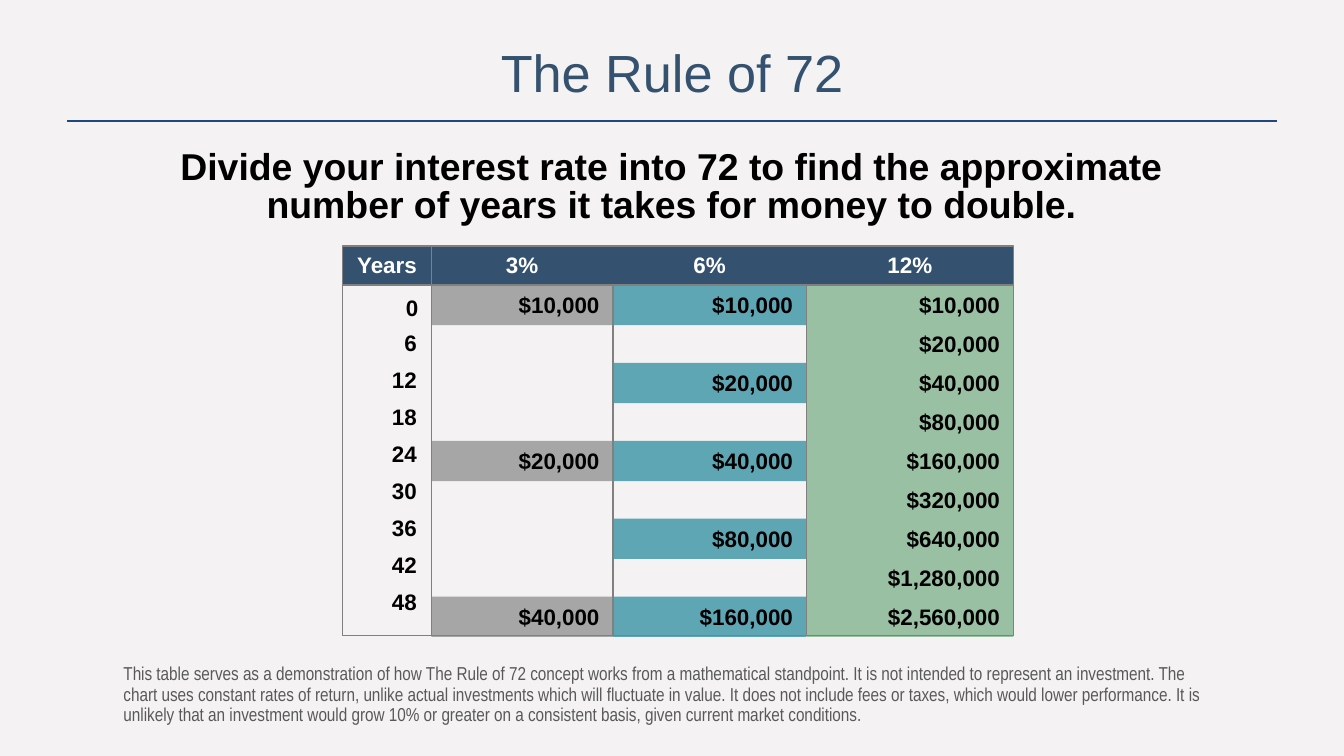
from dataclasses import dataclass

from lxml import etree
from pptx import Presentation
from pptx.dml.color import RGBColor
from pptx.enum import shapes, text
from pptx.oxml import ns
from pptx.util import Inches, Pt


@dataclass(frozen=True)
class Theme:
    font: str = "Arial"
    narrow_font: str = "Arial Narrow"
    background: str = "F4F2F2"
    rule: str = "1F497D"
    navy: str = "34526F"
    grid: str = "808080"
    ink: str = "000000"
    white: str = "FFFFFF"
    note: str = "595959"
    title_size: int = 28
    lead_size: int = 20
    table_size: int = 12
    note_size: int = 10
    line_width: float = 0.75


THEME = Theme()
LEFT, CENTER, RIGHT = text.PP_ALIGN.LEFT, text.PP_ALIGN.CENTER, text.PP_ALIGN.RIGHT

YEARS = range(0, 49, 6)
START_AMOUNT = 10000
# Interest rate, column width, fill colour
RATES = [(3, 1.35, "A6A6A6"), (6, 1.44, "5FA6B5"), (12, 1.54, "9AC0A4")]
YEARS_WIDTH = 0.66
ROW_PITCH = 0.29
CELL_HEIGHT = 0.3


def rgb(value):
    return RGBColor.from_string(value)


def add_text(page, box, *lines, size=THEME.table_size, color=THEME.ink, font=THEME.font,
             bold=True, align=CENTER, anchor=text.MSO_ANCHOR.TOP, fill=None,
             spacing=None, after=0):
    """Write one paragraph per line, in a filled rectangle if fill is given."""
    if fill:
        shape = add_rect(page, box, fill=fill)
    else:
        shape = page.shapes.add_textbox(*[Inches(length) for length in box])
    frame = shape.text_frame
    frame.word_wrap = True
    frame.vertical_anchor = anchor
    for index, line in enumerate(lines):
        para = frame.paragraphs[0] if index == 0 else frame.add_paragraph()
        para.alignment = align
        para.space_after = Pt(after)
        if spacing:
            para.line_spacing = spacing
        span = para.add_run()
        span.text = line
        span.font.name = font
        span.font.size = Pt(size)
        span.font.bold = bold
        span.font.color.rgb = rgb(color)


def add_rect(page, box, fill=None, line=None):
    rect = page.shapes.add_shape(
        shapes.MSO_SHAPE.RECTANGLE, *[Inches(length) for length in box])
    rect.shadow.inherit = False
    if fill:
        rect.fill.solid()
        rect.fill.fore_color.rgb = rgb(fill)
    else:
        rect.fill.background()
    if line:
        rect.line.color.rgb = rgb(line)
        rect.line.width = Pt(THEME.line_width)
    else:
        rect.line.fill.background()
    return rect


def add_line(page, x1, y1, x2, y2, color):
    line = page.shapes.add_connector(
        shapes.MSO_CONNECTOR.STRAIGHT, Inches(x1), Inches(y1), Inches(x2), Inches(y2))
    line.line.color.rgb = rgb(color)
    line.line.width = Pt(THEME.line_width)
    etree.SubElement(line._element.spPr, ns.qn("a:effectLst"))


def add_header(page, left, top, width, height):
    add_text(page, (left, top, width, height), "The Rule of 72", size=THEME.title_size,
             color=THEME.navy, bold=False, anchor=text.MSO_ANCHOR.MIDDLE)
    rule_top = top + 0.65
    add_line(page, left + 0.17, rule_top, left + width - 0.17, rule_top, THEME.rule)


def add_growth_table(page, left, top, width, height):
    """Show each amount in the row of the year in which the money has doubled."""
    body_top = top + ROW_PITCH
    label_top = top - 0.01
    bottom = top + height
    right = left + width

    add_rect(page, (left, top, width, ROW_PITCH), fill=THEME.navy)
    add_text(page, (left, label_top, YEARS_WIDTH, CELL_HEIGHT), "Years", color=THEME.white)

    column_left = left + YEARS_WIDTH
    dividers = []
    for rate, column_width, fill in RATES:
        add_text(page, (column_left, label_top, column_width, CELL_HEIGHT), f"{rate}%",
                 color=THEME.white)
        doubling_years = 72 // rate
        for row, year in enumerate(YEARS):
            if year % doubling_years == 0:
                amount = START_AMOUNT * 2 ** (year // doubling_years)
                cell = (column_left, body_top + row * ROW_PITCH, column_width, CELL_HEIGHT)
                add_text(page, cell, f"${amount:,}", align=RIGHT, fill=fill)
        dividers.append(column_left)
        column_left += column_width

    first_year, *later_years = [str(year) for year in YEARS]
    add_text(page, (left + 0.01, top + 0.31, 0.65, CELL_HEIGHT), first_year, align=RIGHT)
    add_text(page, (left + 0.01, top + 0.57, 0.64, 2.35), *later_years, align=RIGHT,
             after=0.45 * THEME.table_size)

    for index, x in enumerate(dividers):
        add_line(page, x, top if index == 0 else body_top, x, bottom, THEME.grid)
    add_line(page, left, body_top, right, body_top, THEME.grid)
    add_rect(page, (left, top, width, height), line=THEME.grid)


def main():
    deck = Presentation()
    deck.slide_width = Inches(10)
    deck.slide_height = deck.slide_width * 9 // 16
    page = deck.slides.add_slide(deck.slide_layouts[6])
    page.background.fill.solid()
    page.background.fill.fore_color.rgb = rgb(THEME.background)

    add_header(page, 0.33, 0.25, 9.34, 0.57)
    add_text(page, (1.18, 1.07, 7.64, 0.6),
             "Divide your interest rate into 72 to find the approximate number of years "
             "it takes for money to double.",
             size=THEME.lead_size, spacing=0.85)
    add_growth_table(page, 2.55, 1.83, 4.99, 2.9)
    add_text(page, (0.82, 4.89, 8.29, 0.56),
             "This table serves as a demonstration of how The Rule of 72 concept works from a "
             "mathematical standpoint. It is not intended to represent an investment. The chart "
             "uses constant rates of return, unlike actual investments which will fluctuate in "
             "value. It does not include fees or taxes, which would lower performance. It is "
             "unlikely that an investment would grow 10% or greater on a consistent basis, given "
             "current market conditions.",
             size=THEME.note_size, font=THEME.narrow_font, color=THEME.note, bold=False,
             align=LEFT, spacing=Pt(11))
    deck.save("out.pptx")


if __name__ == "__main__":
    main()
